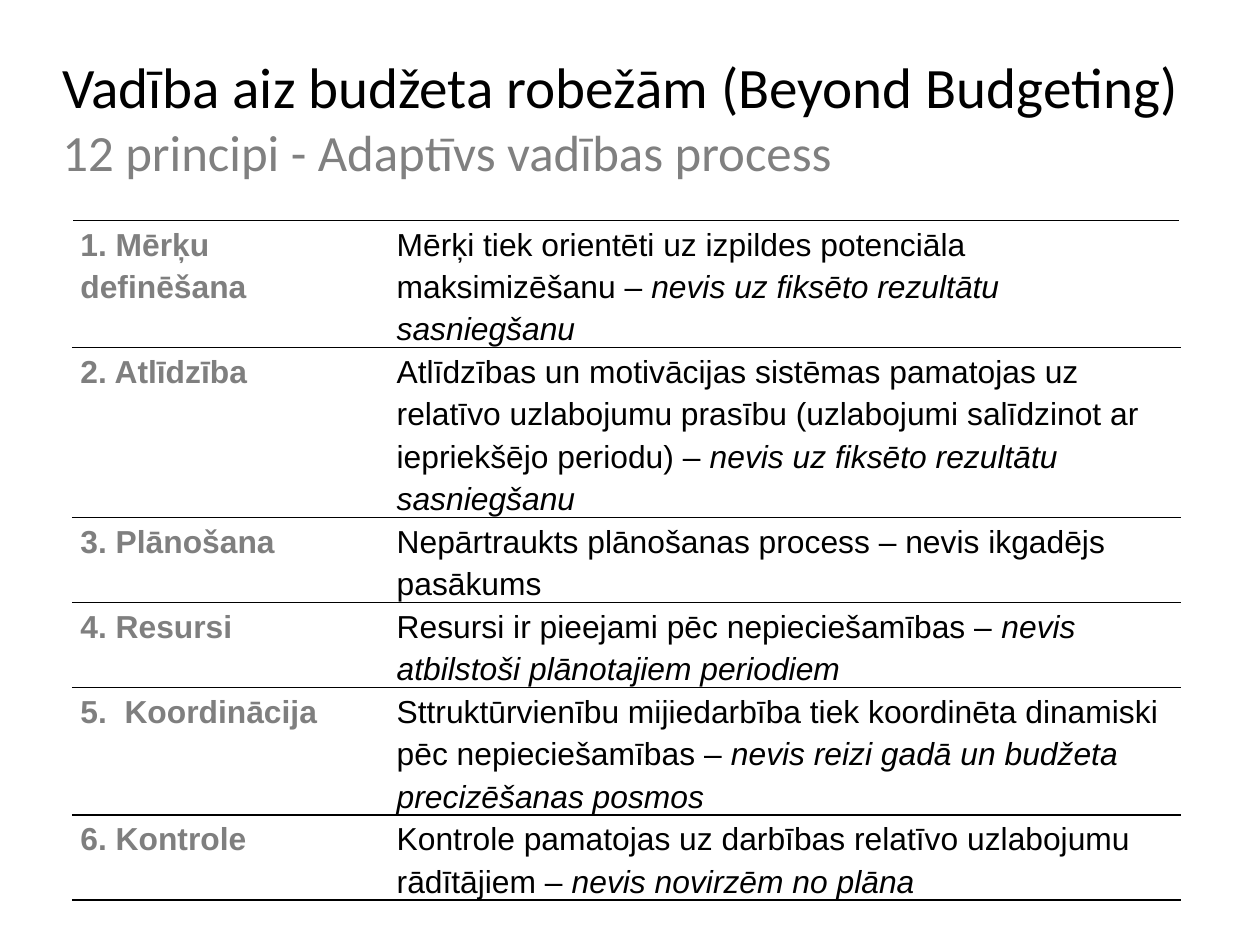
from dataclasses import dataclass

from lxml.etree import SubElement
from pptx import Presentation
from pptx.dml.color import RGBColor
from pptx.enum.text import MSO_ANCHOR, MSO_AUTO_SIZE, PP_ALIGN
from pptx.oxml import parse_xml
from pptx.oxml.ns import nsdecls, qn
from pptx.slide import Slide
from pptx.table import _Cell
from pptx.util import Cm, Inches, Pt

WIDE, HIGH = Cm(28), Cm(21)
BLACK, WHITE, GREY, DIM = "000000", "FFFFFF", "808080", "7F7F7F"
# Cell edges by column; None leaves the inner edge clear
NAMES = {"lnL": WHITE, "lnR": None, "lnT": BLACK, "lnB": BLACK}
TEXTS = {"lnL": None, "lnR": WHITE, "lnT": BLACK, "lnB": BLACK}


@dataclass
class Rule:
    name: str
    text: str
    aside: str = ""


RULES = [
    Rule("1. Mērķu definēšana",
         "Mērķi tiek orientēti uz izpildes potenciāla maksimizēšanu – ",
         "nevis uz fiksēto rezultātu sasniegšanu"),
    Rule("2. Atlīdzība",
         "Atlīdzības un motivācijas sistēmas pamatojas uz relatīvo uzlabojumu "
         "prasību (uzlabojumi salīdzinot ar iepriekšējo periodu) – ",
         "nevis uz fiksēto rezultātu sasniegšanu"),
    Rule("3. Plānošana",
         "Nepārtraukts plānošanas process – nevis ikgadējs pasākums"),
    Rule("4. Resursi",
         "Resursi ir pieejami pēc nepieciešamības – ",
         "nevis atbilstoši plānotajiem periodiem"),
    Rule("5.  Koordinācija",
         "Sttruktūrvienību mijiedarbība tiek koordinēta dinamiski "
         "pēc nepieciešamības – ",
         "nevis reizi gadā un budžeta precizēšanas posmos"),
    Rule("6. Kontrole",
         "Kontrole pamatojas uz darbības relatīvo uzlabojumu rādītājiem – ",
         "nevis novirzēm no plāna"),
]


def color(code: str) -> RGBColor:
    return RGBColor.from_string(code)


def across(part: float) -> int:
    """Percent of the slide's width."""
    return round(WIDE * part / 100)


def down(part: float) -> int:
    """Percent of the slide's height."""
    return round(HIGH * part / 100)


def add_title(slide: Slide) -> None:
    title = slide.shapes.title
    title.left, title.top = across(4.95), down(3.95)
    title.width, title.height = across(90), down(16.7)
    frame = title.text_frame
    frame.auto_size = MSO_AUTO_SIZE.NONE
    frame.word_wrap = True
    frame.vertical_anchor = MSO_ANCHOR.MIDDLE
    frame.margin_left = frame.margin_right = 0
    frame.margin_top = frame.margin_bottom = 0
    para = frame.paragraphs[0]
    para.alignment = PP_ALIGN.LEFT
    para.line_spacing = 1.01
    para.font.name = "Calibri"
    parts = [("Vadība aiz budžeta robežām (Beyond Budgeting)", 36, BLACK),
             ("12 principi - Adaptīvs vadības process", 32, GREY)]
    for spot, (text, size, tint) in enumerate(parts):
        if spot:
            para.add_line_break()
        run = para.add_run()
        run.text = text
        run.font.size = Pt(size)
        run.font.color.rgb = color(tint)


def add_edges(cell: _Cell, edges: dict[str, str | None]) -> None:
    props = cell._tc.get_or_add_tcPr()
    for spot, (tag, tint) in enumerate(edges.items()):
        edge = parse_xml(f'<a:{tag} {nsdecls("a")} w="{Pt(1)}"/>')
        if tint:
            fill = SubElement(edge, qn("a:solidFill"))
            SubElement(fill, qn("a:srgbClr"), val=tint)
        else:
            SubElement(edge, qn("a:noFill"))
        props.insert(spot, edge)


def fill_cell(cell: _Cell, text: str, aside: str, tint: str, bold: bool) -> None:
    cell.fill.solid()
    cell.fill.fore_color.rgb = color(WHITE)
    cell.margin_left = cell.margin_right = Inches(0.07)
    cell.margin_top = cell.margin_bottom = 0
    para = cell.text_frame.paragraphs[0]
    para.line_spacing = 1.2
    font = para.font
    font.name, font.size, font.bold = "Arial", Pt(20), bold
    font.color.rgb = color(tint)
    para.add_run().text = text
    if aside:
        run = para.add_run()
        run.text = aside
        run.font.italic = True


def add_rules(slide: Slide) -> None:
    frame = slide.shapes.add_table(len(RULES), 2, across(5.75), down(23.3),
                                   across(87.9), down(63))
    table = frame.table
    table.first_row = table.horz_banding = False
    for col, part in zip(table.columns, (25.1, 62.8)):
        col.width = across(part)
    for row, rule in zip(table.rows, RULES):
        row.height = down(4.95)
        name, text = row.cells
        fill_cell(name, rule.name, "", DIM, True)
        fill_cell(text, rule.text, rule.aside, BLACK, False)
        add_edges(name, NAMES)
        add_edges(text, TEXTS)
    # Rows grow with their text
    frame.height = down(63)


def main() -> None:
    deck = Presentation()
    deck.slide_width, deck.slide_height = WIDE, HIGH
    deck.element.sldSz.attrib.pop("type", None)
    slide = deck.slides.add_slide(deck.slide_layouts[5])
    # Heading in two lines
    add_title(slide)
    # Table of principles
    add_rules(slide)
    deck.save("out.pptx")


if __name__ == "__main__":
    main()
